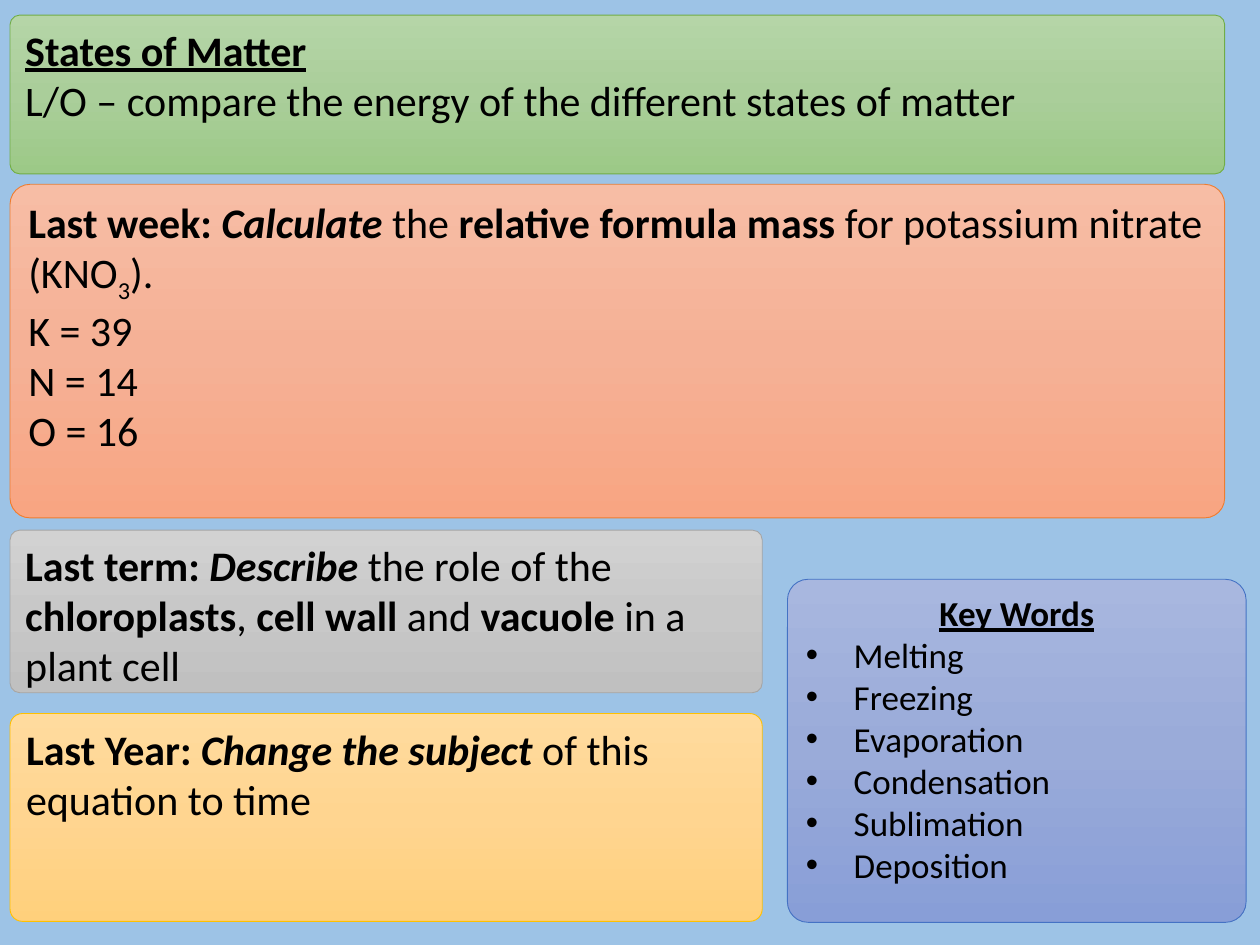
"""Builds a starter slide on states of matter with recall questions and key words."""
from copy import deepcopy

from lxml import etree
from pptx import Presentation
from pptx.dml.color import RGBColor
from pptx.enum.shapes import MSO_SHAPE
from pptx.enum.text import MSO_ANCHOR, PP_ALIGN
from pptx.oxml.ns import qn
from pptx.util import Inches, Pt

ROUNDED = MSO_SHAPE.ROUNDED_RECTANGLE
TOP = MSO_ANCHOR.TOP
LEFT = PP_ALIGN.LEFT
CENTER = PP_ALIGN.CENTER
BOLD = {"bold": True}
STRONG = {"bold": True, "italic": True}
HEADING = {"bold": True, "underline": True}
PLAIN = {}


def colour(code):
    return RGBColor.from_string(code)


def add_span(para, text, size=24, bold=False, italic=False, underline=False, baseline=0):
    span = para.add_run()
    span.text = text
    span.font.name = "Calibri"
    span.font.size = Pt(size)
    span.font.bold = bold
    span.font.italic = italic
    span.font.underline = underline
    span.font.color.rgb = colour("000000")
    if baseline:
        span.font._element.set("baseline", str(baseline * 1000))


deck = Presentation()
deck.slide_width = Inches(10)
deck.slide_height = Inches(7.5)
page = deck.slides.add_slide(deck.slide_layouts[6])
page.background.fill.solid()
page.background.fill.fore_color.rgb = colour("9DC3E6")

key_words = ["Melting", "Freezing", "Evaporation", "Condensation", "Sublimation", "Deposition"]
margin, wide, narrow = 0.8, 96.4, 59.7

# Each panel: left, top, width and height in percent of the slide, then colours, size and text.
panels = [
    ((margin, 1.6, wide, 16.8), ("B5D5A7", "AACE9A", "9CC987"), "70AD47", 24, [
        [("States of Matter", HEADING)],
        [("L/O – compare the energy of the different states of matter", PLAIN)],
    ]),
    ((margin, 19.5, wide, 35.3), ("F7BDA5", "F5B196", "F8A582"), "ED7D31", 24, [
        [("Last week: ", BOLD), ("Calculate", STRONG), (" the ", PLAIN),
         ("relative formula mass", BOLD), (" for potassium nitrate (KNO", PLAIN),
         ("3", {"baseline": -25}), (").", PLAIN)],
        [("K = 39", PLAIN)],
        [("N = 14", PLAIN)],
        [("O = 16", PLAIN)],
    ]),
    ((margin, 56.1, narrow, 17.2), ("D2D2D2", "C8C8C8", "C0C0C0"), "A5A5A5", 24, [
        [("Last term: ", BOLD), ("Describe", STRONG), (" the role of the ", PLAIN),
         ("chloroplasts", BOLD), (", ", PLAIN), ("cell wall", BOLD), (" and ", PLAIN),
         ("vacuole", BOLD), (" in a plant cell", PLAIN)],
    ]),
    ((margin, 75.5, narrow, 22), ("FFDB9E", "FFD590", "FFD07C"), "FFC000", 24, [
        [("Last Year: ", BOLD), ("Change the subject", STRONG),
         (" of this equation to time", PLAIN)],
    ]),
    ((62.5, 61.3, 36.4, 36.3), ("A8B7DF", "9AABD9", "889ED7"), "4472C4", 20, [
        [("Key Words", HEADING)],
        *[[(word, PLAIN)] for word in key_words],
    ]),
]

for (left, top, width, height), shades, outline, size, lines in panels:
    box = page.shapes.add_shape(
        ROUNDED,
        int(deck.slide_width * left / 100), int(deck.slide_height * top / 100),
        int(deck.slide_width * width / 100), int(deck.slide_height * height / 100))
    box.adjustments[0] = 0.06
    box.shadow.inherit = False
    box.line.color.rgb = colour(outline)
    box.line.width = Pt(0.5)

    box.fill.gradient()
    box.fill.gradient_angle = 270
    first_stop = box._element.spPr.find(".//" + qn("a:gs"))
    first_stop.addnext(deepcopy(first_stop))
    for stop, shade, position in zip(box.fill.gradient_stops, shades, (0, 0.5, 1)):
        stop.color.rgb = colour(shade)
        stop.position = position

    frame = box.text_frame
    frame.word_wrap = True
    frame.vertical_anchor = TOP
    for number, spans in enumerate(lines):
        para = frame.paragraphs[0] if number == 0 else frame.add_paragraph()
        para.alignment = LEFT
        if spans[0][0] == "Key Words":
            para.alignment = CENTER
        elif spans[0][0] in key_words:
            properties = para._p.get_or_add_pPr()
            properties.set("marL", str(Inches(0.38)))
            properties.set("indent", str(-Inches(0.38)))
            etree.SubElement(properties, qn("a:buFont"), typeface="Arial")
            etree.SubElement(properties, qn("a:buChar"), char="•")
        for text, style in spans:
            add_span(para, text, size=size, **style)

deck.save("out.pptx")
